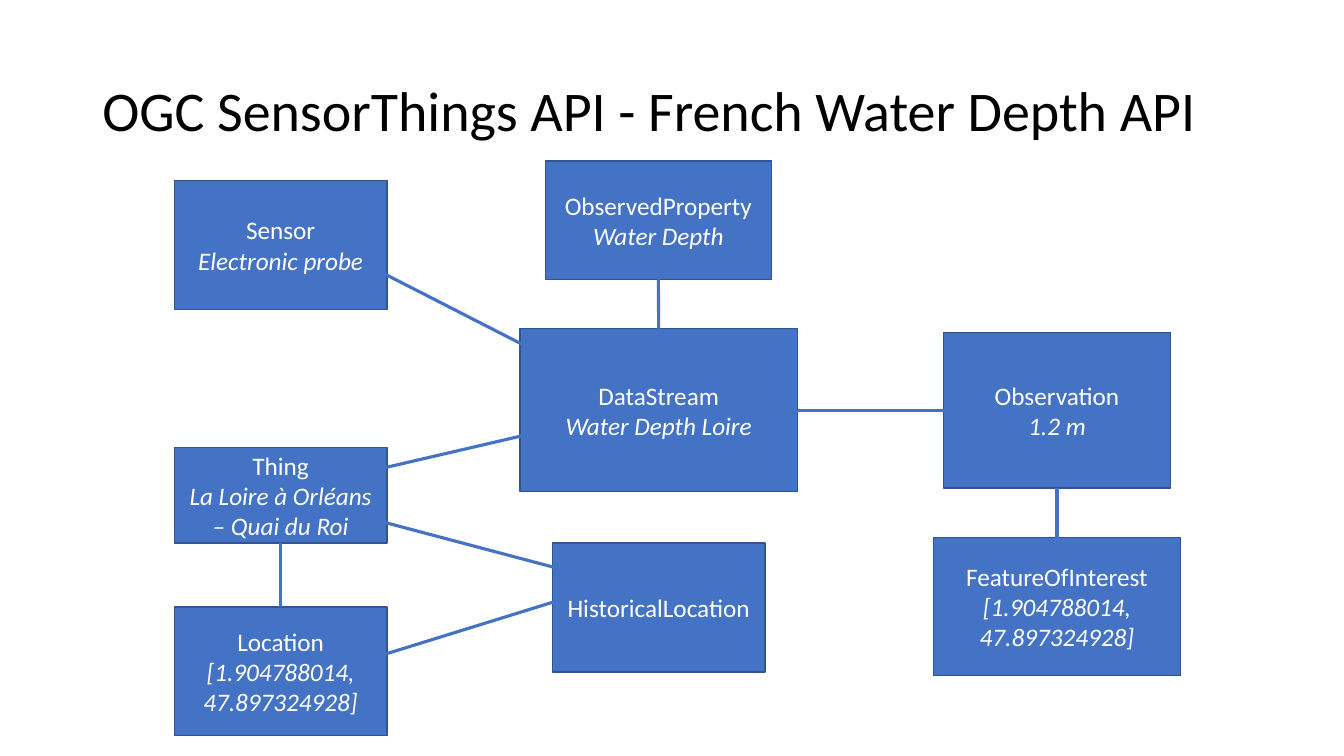
import pptx
import pptx.dml.color
import pptx.enum.shapes
import pptx.enum.text
import pptx.oxml.ns
import pptx.util
from lxml import etree

Pt = pptx.util.Pt
RGBColor = pptx.dml.color.RGBColor
ALIGN = pptx.enum.text.PP_ALIGN

BLUE = RGBColor(0x44, 0x72, 0xC4)
DARK_BLUE = RGBColor(0x32, 0x54, 0x91)
WHITE = RGBColor(0xFF, 0xFF, 0xFF)
BLACK = RGBColor(0x00, 0x00, 0x00)

TOP, LEFT, BOTTOM, RIGHT = range(4)
COORDINATES = "[1.904788014, 47.897324928]"

# entity: (example value, left, top, width, height)
ENTITIES = {
    "Sensor": ("Electronic probe", 124.5, 129, 152, 92),
    "ObservedProperty": ("Water Depth", 389.5, 115, 161.5, 84.5),
    "DataStream": ("Water Depth Loire", 371.5, 234.75, 198, 116.5),
    "Thing": ("La Loire à Orléans – Quai du Roi", 124.5, 319.75, 152, 68),
    "Location": (COORDINATES, 124.5, 433.5, 152, 92),
    "HistoricalLocation": (None, 394.5, 388, 152, 92),
    "Observation": ("1.2 m", 674, 237.5, 162, 111),
    "FeatureOfInterest": (COORDINATES, 666.75, 384, 176.5, 98.5),
}

STRAIGHT_RELATIONS = [
    ("ObservedProperty", BOTTOM, "DataStream", TOP),
    ("Observation", LEFT, "DataStream", RIGHT),
    ("FeatureOfInterest", TOP, "Observation", BOTTOM),
    ("Location", TOP, "Thing", BOTTOM),
]

SLANTED_RELATIONS = [
    (266.5, 191.5, 378, 248.5),  # Sensor to DataStream
    (265.5, 336.25, 392.5, 306.75),  # Thing to DataStream
    (268.5, 371.5, 417.5, 411),  # Thing to HistoricalLocation
    (265.5, 470.25, 414.75, 424),  # Location to HistoricalLocation
]


class Diagram:
    font = "Calibri"
    entity_size = 18
    border_width = 1
    relation_width = 2.25

    def __init__(self, slide):
        self.shapes = slide.shapes

    def add_text(self, paragraph, text, size, color, italic=False):
        run = paragraph.add_run()
        run.text = text
        run.font.name = self.font
        run.font.size = Pt(size)
        run.font.color.rgb = color
        if italic:
            run.font.italic = True

    def title(self, text, left, top, width, height):
        box = self.shapes.add_textbox(Pt(left), Pt(top), Pt(width), Pt(height))
        frame = box.text_frame
        frame.word_wrap = True
        frame.vertical_anchor = pptx.enum.text.MSO_ANCHOR.MIDDLE
        frame.paragraphs[0].line_spacing = 0.9
        self.add_text(frame.paragraphs[0], text, size=40, color=BLACK)

    def entity(self, name, value, left, top, width, height):
        box = self.shapes.add_shape(
            pptx.enum.shapes.MSO_SHAPE.RECTANGLE,
            Pt(left), Pt(top), Pt(width), Pt(height))
        box.shadow.inherit = False
        box.fill.solid()
        box.fill.fore_color.rgb = BLUE
        box.line.color.rgb = DARK_BLUE
        box.line.width = Pt(self.border_width)
        frame = box.text_frame
        frame.word_wrap = True
        frame.vertical_anchor = pptx.enum.text.MSO_ANCHOR.MIDDLE
        label = frame.paragraphs[0]
        label.alignment = ALIGN.CENTER
        self.add_text(label, name, size=self.entity_size, color=WHITE)
        if value:
            label.add_line_break()
            self.add_text(label, value, size=self.entity_size, color=WHITE, italic=True)
        return box

    def relation(self, x1=0, y1=0, x2=0, y2=0):
        line = self.shapes.add_connector(
            pptx.enum.shapes.MSO_CONNECTOR.STRAIGHT,
            Pt(x1), Pt(y1), Pt(x2), Pt(y2))
        line.line.color.rgb = BLUE
        line.line.width = Pt(self.relation_width)
        etree.SubElement(line._element.spPr, pptx.oxml.ns.qn("a:effectLst"))
        return line

    def glued_relation(self, start, start_side, end, end_side):
        line = self.relation()
        line.begin_connect(start, start_side)
        line.end_connect(end, end_side)


def main():
    deck = pptx.Presentation()
    deck.slide_width, deck.slide_height = Pt(960), Pt(540)
    diagram = Diagram(deck.slides.add_slide(deck.slide_layouts[6]))

    diagram.title("OGC SensorThings API - French Water Depth API", 66, 55.5, 828, 51)
    entities = {name: diagram.entity(name, *details)
                for name, details in ENTITIES.items()}
    for ends in SLANTED_RELATIONS:
        diagram.relation(*ends)
    for start, start_side, end, end_side in STRAIGHT_RELATIONS:
        diagram.glued_relation(entities[start], start_side, entities[end], end_side)

    deck.save("out.pptx")


if __name__ == "__main__":
    main()
